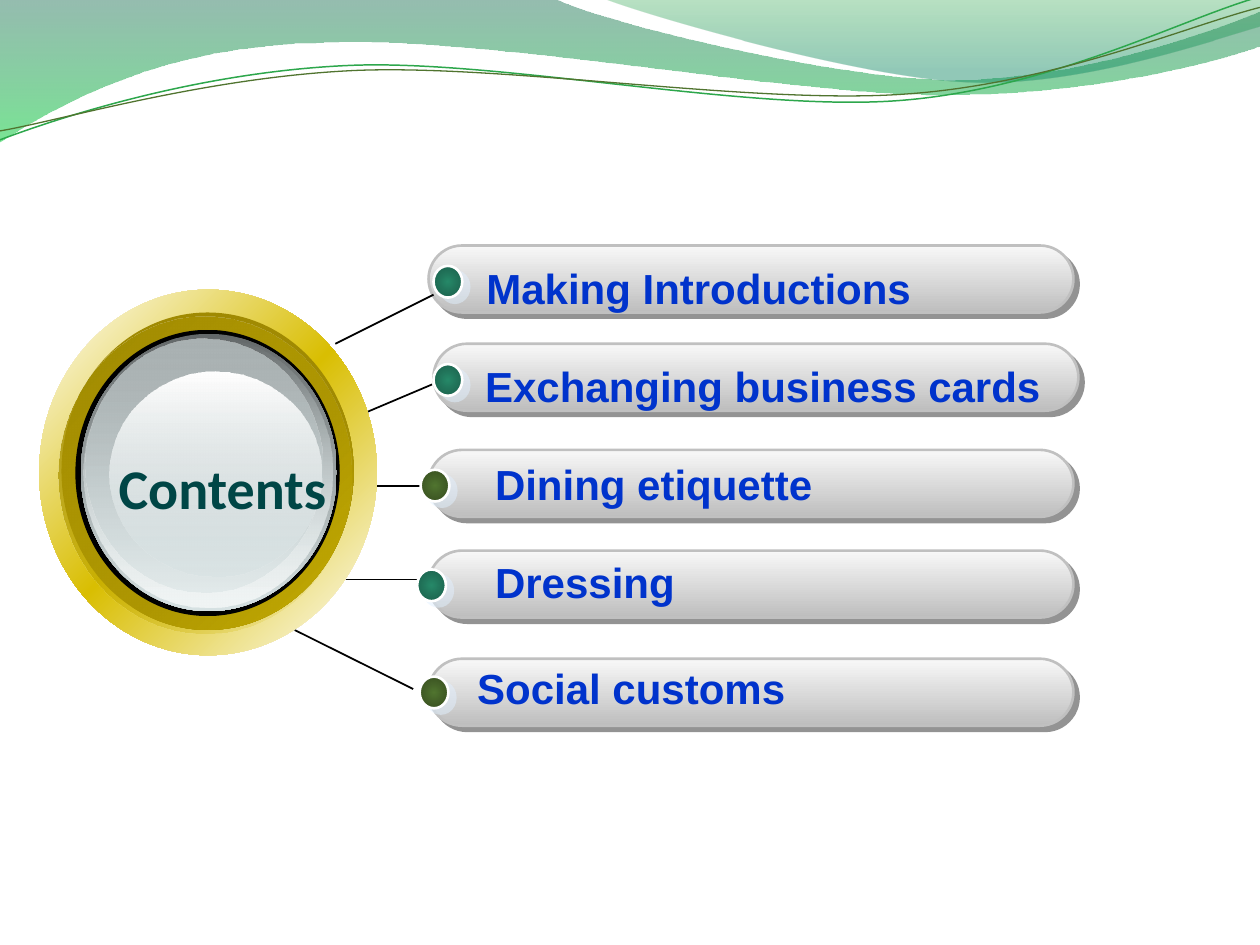
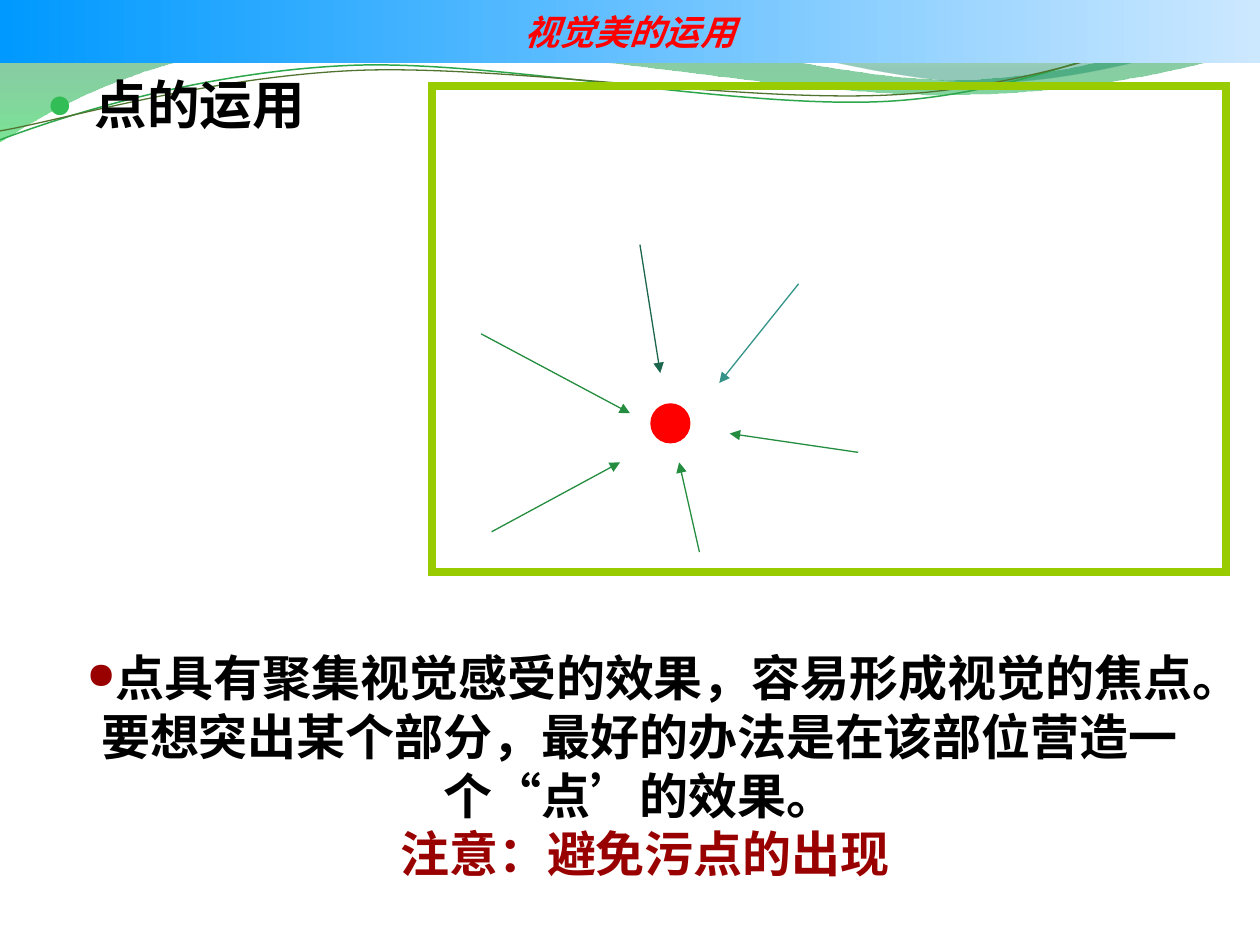
from dataclasses import dataclass

from lxml.etree import SubElement
from pptx import Presentation
from pptx.dml.color import RGBColor
from pptx.enum.shapes import MSO_CONNECTOR as Link, MSO_SHAPE as Preset
from pptx.enum.text import MSO_ANCHOR as Anchor, MSO_AUTO_SIZE as Fit, PP_ALIGN as Align
from pptx.oxml.ns import qn
from pptx.util import Cm, Pt


@dataclass(frozen=True)
class Theme:
    black: str = "000000"
    white: str = "FFFFFF"
    red: str = "FF0000"
    maroon: str = "990000"
    bullet: str = "33BD56"
    topic: str = "0033CC"
    heading: str = "004646"
    frame: str = "99CC00"
    leaf: str = "248D3F"
    teal: str = "36938A"
    pine: str = "1B664D"
    pill_edge: str = "C0C0C0"
    pill_shadow: str = "292929"
    dot_shadow: str = "E1F0FF"
    pill: tuple = ((0, "F8F8F8"), (100, "BEBEBE"))
    emerald: tuple = ((0, "268868"), (100, "1A5A48"))
    olive: tuple = ((0, "50742F"), (100, "34481E"))
    band: tuple = ((0, "0099FF"), (100, "CCE8FF"))
    latin: str = "Arial"
    serif: str = "TeX Gyre Pagella"
    cjk: str = "Noto Sans CJK SC"
    heading_size: int = 32
    topic_size: int = 24
    band_size: int = 20
    bullet_size: int = 26
    point_size: int = 30
    note_size: int = 28


T = Theme()

WAVES = [
    ([[(0, -0.03)], [(11.18, -0.03)],
      [(12.09, 0.43), (16.87, 1.6), (19.25, 1.6)],
      [(21.67, 1.6), (24.33, 0.66), (25.4, 0.23)], [(25.43, 0.91)],
      [(24.97, 1.12), (22.1, 1.93), (18.95, 1.91)],
      [(15.8, 1.91), (9.7, 0.71), (6.53, 0.86)],
      [(3.28, 0.89), (1.17, 2.11), (-0.03, 2.87)]],
     ((0, "156C4F", 45), (100, "0CCE3D", 55))),
    ([[(12.17, -0.03)],
      [(12.93, 0.28), (17.32, 1.57), (19.53, 1.65)],
      [(21.74, 1.75), (24.41, 0.81), (25.4, 0.53)], [(25.4, 0)]],
     ((0, "169B38", 30), (80, "108962", 45))),
]
STRANDS = [
    ([[(0, 2.82)], [(1.22, 2.36), (4.01, 1.45), (7.04, 1.32)],
      [(10.03, 1.19), (15.06, 2.26), (18.11, 2.03)],
      [(21.16, 1.8), (23.83, 0.38), (25.35, -0.05)]], "2DA74C", 0.85),
    ([[(0, 2.64)], [(1.19, 2.44), (4.17, 1.55), (7.19, 1.42)],
      [(10.24, 1.3), (15.16, 2.11), (18.21, 1.9)],
      [(21.23, 1.7), (23.9, 0.53), (25.4, 0.15)]], "50742F", 0.75),
]

PILL_SIZE = (13, 1.35)
DOT_SIZE = (0.58, 0.64)
TOPICS = [
    (" Making Introductions", (8.64, 4.95), (8.74, 5.36), T.emerald, (9.32, 5.16), (6.76, 6.93), (8.74, 5.94)),
    ("Exchanging business cards", (8.74, 6.93), (8.74, 7.34), T.emerald, (9.53, 7.14), (7.34, 8.33), (8.71, 7.75)),
    ("Dining etiquette", (8.64, 9.07), (8.48, 9.47), T.olive, (9.73, 9.12), (7.11, 9.8), (8.66, 9.8)),
    ("Dressing", (8.64, 11.1), (8.41, 11.48), T.emerald, (9.73, 11.1), (6.91, 11.68), (8.66, 11.68)),
    ("Social customs", (8.64, 13.28), (8.46, 13.64), T.olive, (9.37, 13.23), (5.94, 12.7), (8.33, 13.89)),
]
MEDALLION = [
    ((0.79, 5.84, 6.81, 7.37), ((0, "FFFFFF"), (50, "D9BE02"), (100, "FFFFFF")), 45),
    ((1.24, 6.3, 5.89, 6.4), ((0, "A08A02"), (60, "A08A02"), (100, "C8AF02")), 45),
    ((1.19, 6.38, 5.89, 6.4), ((0, "9C8702"), (100, "D9BE02", 0)), 45),
    ((1.52, 6.65, 5.33, 5.77), ((0, "000000"), (100, "000000")), 90),
    ((1.63, 6.73, 5.16, 5.59), ((0, "636869"), (100, "D6E1E2")), 90),
    ((1.68, 6.78, 5.03, 5.46), ((0, "D6E1E2", 0), (100, "F1F5F5")), 90),
    ((1.73, 6.83, 4.78, 5.11), ((0, "AAB2B3"), (100, "D6E1E2", 48)), 90),
    ((2.21, 7.49, 4.27, 4.14), ((0, "FFFFFF"), (100, "D6E1E2", 38)), 90),
]

ARROWS = [
    ((9.7, 6.73), (12.7, 8.33), T.leaf),
    ((9.91, 10.72), (12.5, 9.32), T.leaf),
    ((16.1, 5.72), (14.5, 7.72), T.teal),
    ((17.3, 9.12), (14.71, 8.74), T.leaf),
    ((12.9, 4.93), (13.31, 7.52), T.pine),
    ((14.1, 11.13), (13.69, 9.32), T.leaf),
]
NOTE = [
    [("点具有聚集视觉感受的效果，容易形成视觉的焦点。要想突出某个部分，最好的办法是在该部位营造一个", "DejaVu Sans"),
     ("“", T.cjk), ("点", "DejaVu Sans"), ("’", T.cjk), ("的效果。", "DejaVu Sans")],
    [(" 注意：避免污点的出现", T.cjk)],
]


def rgb(code):
    return RGBColor.from_string(code)


def cm(values):
    return [Cm(value) for value in values]


def add_color(parent, code, alpha=100):
    color = SubElement(parent, qn("a:srgbClr"), val=code)
    if alpha < 100:
        SubElement(color, qn("a:alpha"), val=str(alpha * 1000))


def paint(shape, stops, angle=None):
    shape.fill.gradient()
    gradient = shape.element.spPr.find(qn("a:gradFill"))
    for child in list(gradient):
        gradient.remove(child)
    stop_list = SubElement(gradient, qn("a:gsLst"))
    for position, *color in stops:
        add_color(SubElement(stop_list, qn("a:gs"), pos=str(position * 1000)), *color)
    if angle is None:
        center = SubElement(gradient, qn("a:path"), path="circle")
        SubElement(center, qn("a:fillToRect"), l="50000", t="50000", r="50000", b="50000")
    else:
        SubElement(gradient, qn("a:lin"), ang=str(angle * 60000), scaled="0")


def outline(shape, code=None, width=1.5):
    if code is None:
        shape.line.fill.background()
    else:
        shape.line.color.rgb = rgb(code)
        shape.line.width = Pt(width)


def add_figure(slide, preset, box, edge=None, width=1.5):
    figure = slide.shapes.add_shape(preset, *cm(box))
    figure.shadow.inherit = False
    outline(figure, edge, width)
    return figure


def cast_shadow(shape, code, distance, angle):
    effects = shape.element.spPr.find(qn("a:effectLst"))
    shadow = SubElement(effects, qn("a:outerShdw"), dist=str(Pt(distance)),
                        dir=str(angle * 60000), algn="ctr", rotWithShape="0")
    add_color(shadow, code, 50)


def add_line(slide, start, end, code, width, arrow=False):
    line = slide.shapes.add_connector(Link.STRAIGHT, *cm(start + end))
    outline(line, code, width)
    if arrow:
        SubElement(line.element.spPr.find(qn("a:ln")), qn("a:tailEnd"), type="triangle")
    SubElement(line.element.spPr, qn("a:effectLst"))


def add_run(paragraph, text, font, size, code, bold=True, italic=None):
    run = paragraph.add_run()
    run.text = text
    run.font.name = font
    run.font.size = Pt(size)
    run.font.bold = bold
    run.font.italic = italic
    run.font.color.rgb = rgb(code)
    if not text.isascii():
        properties = run.font._element
        properties.set("lang", "zh-CN")
        SubElement(properties, qn("a:ea"), typeface=T.cjk)


def add_bullet(paragraph, code, hang, percent):
    properties = paragraph._p.get_or_add_pPr()
    properties.set("marL", str(Cm(hang)))
    properties.set("indent", str(-Cm(hang)))
    add_color(SubElement(properties, qn("a:buClr")), code)
    SubElement(properties, qn("a:buSzPct"), val=str(percent * 1000))
    SubElement(properties, qn("a:buChar"), char="●")


def place(shape, box, anchor):
    shape.left, shape.top, shape.width, shape.height = cm(box)
    frame = shape.text_frame
    frame.word_wrap = True
    frame.auto_size = Fit.NONE
    frame.vertical_anchor = anchor
    return frame


def add_curve(slide, segments, close):
    first, *rest = [cm(point) for segment in segments for point in segment]
    builder = slide.shapes.build_freeform(*first)
    builder.add_line_segments(rest, close=close)
    curve = builder.convert_to_shape()
    curve.shadow.inherit = False
    steps = iter(list(curve.element.iter(qn("a:lnTo"))))
    for segment in segments[1:]:
        corners = [next(steps) for _ in segment]
        if len(corners) == 3:
            bezier = SubElement(corners[0].getparent(), qn("a:cubicBezTo"))
            corners[0].addprevious(bezier)
            for corner in corners:
                bezier.append(corner[0])
                corner.getparent().remove(corner)
    return curve


def decorate_master(prs, slide):
    curves = []
    for segments, stops in WAVES:
        wave = add_curve(slide, segments, True)
        paint(wave, stops, 90)
        outline(wave)
        curves.append(wave)
    for segments, code, width in STRANDS:
        strand = add_curve(slide, segments, False)
        strand.fill.background()
        outline(strand, code, width)
        curves.append(strand)
    tree = prs.slide_master.shapes.element
    for index, curve in enumerate(curves, 2):
        tree.insert(index, curve.element)


def build_contents(slide):
    for _, corner, _, _, _, start, end in TOPICS:
        pill = add_figure(slide, Preset.ROUNDED_RECTANGLE, corner + PILL_SIZE, T.pill_edge)
        pill.adjustments[0] = 0.5
        paint(pill, T.pill, 90)
        cast_shadow(pill, T.pill_shadow, 4.2, 45)
        add_line(slide, start, end, T.black, 1)
    for box, stops, angle in MEDALLION:
        paint(add_figure(slide, Preset.OVAL, box), stops, angle)
    for topic, _, dot_corner, stops, text_corner, _, _ in TOPICS:
        dot = add_figure(slide, Preset.OVAL, dot_corner + DOT_SIZE, T.white)
        paint(dot, stops)
        cast_shadow(dot, T.dot_shadow, 5, 37)
        label_box = text_corner + (12.6, 1.27)
        label = place(slide.shapes.add_textbox(*cm(label_box)), label_box, Anchor.TOP)
        add_run(label.paragraphs[0], topic, T.latin, T.topic_size, T.topic)
    title = slide.shapes.title
    slide.shapes.element.append(title.element)
    heading = place(title, (2.39, 7.92, 7.14, 2.57), Anchor.BOTTOM)
    heading.margin_left = heading.margin_right = heading.margin_bottom = 0
    heading.paragraphs[0].alignment = Align.LEFT
    add_run(heading.paragraphs[0], "Contents", "Calibri", T.heading_size, T.heading)


def build_focus(slide):
    band = slide.shapes.title
    paint(band, T.band, 0)
    band_text = place(band, (0, 0, 25.4, 1.27), Anchor.MIDDLE).paragraphs[0]
    band_text.alignment = Align.CENTER
    add_run(band_text, "视觉美的运用", "Times New Roman", T.band_size, T.red, italic=True)

    point = place(slide.placeholders[1], (0.69, 1.32, 22.86, 2.01), Anchor.TOP).paragraphs[0]
    point.space_before = Pt(0)
    add_bullet(point, T.bullet, 0.76, 95)
    add_run(point, " ", T.serif, T.bullet_size, T.black, bold=False)
    add_run(point, "点的运用", T.serif, T.point_size, T.black)

    frame = add_figure(slide, Preset.RECTANGLE, (8.71, 1.73, 16, 9.8), T.frame, 4.5)
    frame.fill.background()
    SubElement(frame.element.spPr.find(qn("a:ln")), qn("a:miter"), lim="800000")
    for start, end, code in ARROWS:
        add_line(slide, start, end, code, 0.75, True)
    focus = add_figure(slide, Preset.OVAL, (13.11, 8.13, 0.81, 0.81))
    focus.fill.solid()
    focus.fill.fore_color.rgb = rgb(T.red)

    note_box = (1.09, 12.93, 23.6, 5)
    note = place(slide.shapes.add_textbox(*cm(note_box)), note_box, Anchor.MIDDLE)
    for index, runs in enumerate(NOTE):
        paragraph = note.add_paragraph() if index else note.paragraphs[0]
        paragraph.alignment = Align.CENTER
        paragraph.line_spacing = Pt(33.5)
        if index == 0:
            add_bullet(paragraph, T.maroon, 0, 75)
        for text, font in runs:
            add_run(paragraph, text, font, T.note_size, T.maroon if index else T.black)


def main():
    prs = Presentation()
    prs.slide_width, prs.slide_height = Cm(25.4), Cm(19.05)
    contents = prs.slides.add_slide(prs.slide_layouts[5])
    decorate_master(prs, contents)
    build_contents(contents)
    build_focus(prs.slides.add_slide(prs.slide_layouts[1]))
    prs.save("out.pptx")


if __name__ == "__main__":
    main()
